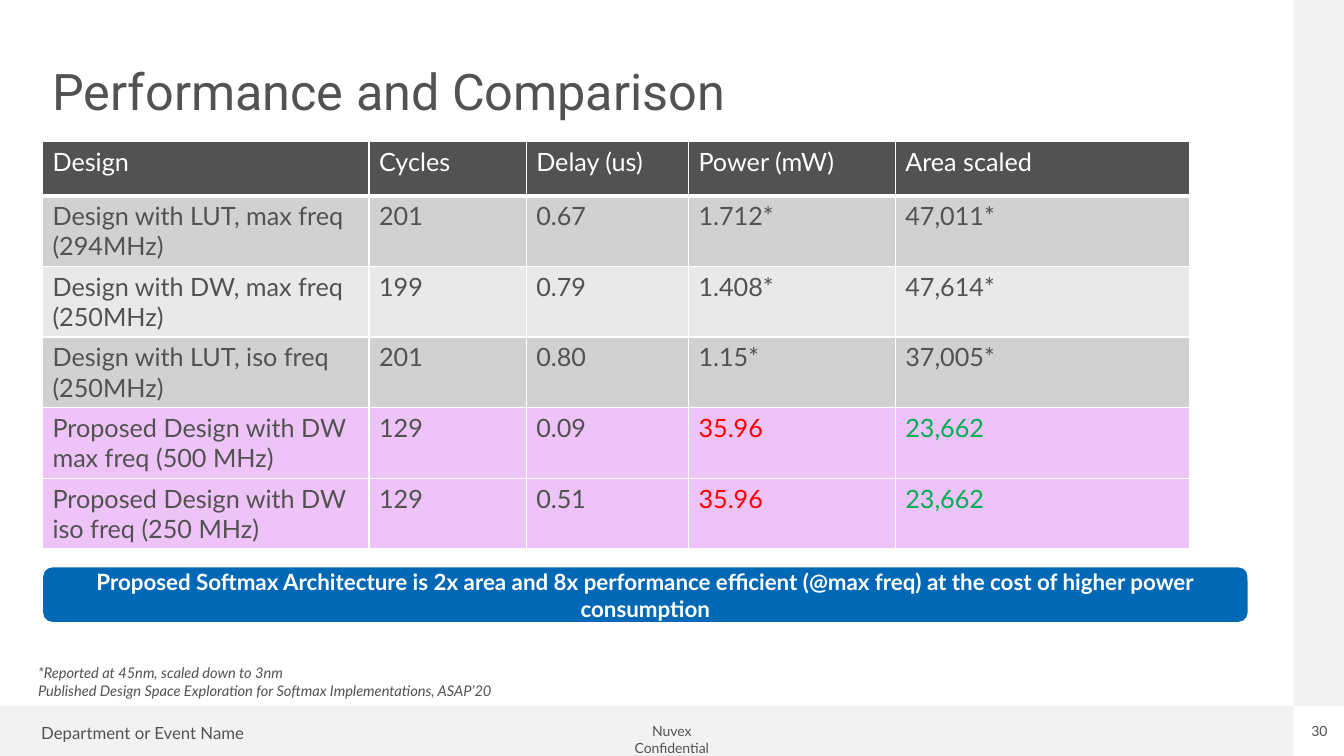
from dataclasses import dataclass

from lxml import etree
from pptx import Presentation
from pptx.dml.color import RGBColor
from pptx.enum.shapes import MSO_SHAPE
from pptx.enum.text import MSO_ANCHOR, PP_ALIGN
from pptx.oxml.ns import qn
from pptx.util import Cm, Pt

RECTANGLE = MSO_SHAPE.RECTANGLE
ROUNDED = MSO_SHAPE.ROUNDED_RECTANGLE
LEFT, CENTER = PP_ALIGN.LEFT, PP_ALIGN.CENTER
TOP, MIDDLE = MSO_ANCHOR.TOP, MSO_ANCHOR.MIDDLE


@dataclass(frozen=True)
class Theme:
    body_font: str = "Lato"
    title_font: str = "Roboto"
    ink: str = "525252"
    white: str = "FFFFFF"
    margin_band: str = "F2F2F2"
    row_dark: str = "D1D1D1"
    row_light: str = "E9E9E9"
    proposed: str = "EEC3F7"
    worse: str = "FF0000"
    better: str = "00B050"
    banner: str = "0068B5"
    title_size: float = 36
    table_size: float = 18
    banner_size: float = 16
    department_size: float = 12
    note_size: float = 10.5
    footer_size: float = 10


theme = Theme()


def write(frame, text, size, color=theme.ink, font=theme.body_font,
          align=LEFT, bold=False, italic=False):
    """Fill a text frame with one paragraph per line of text."""
    for index, line in enumerate(text.split("\n")):
        para = frame.add_paragraph() if index else frame.paragraphs[0]
        para.alignment = align
        span = para.add_run()
        span.text = line
        span.font.size = Pt(size)
        span.font.name = font
        span.font.bold = bold
        span.font.italic = italic
        span.font.color.rgb = RGBColor.from_string(color)


def add_panel(kind, left, top, width, height, color):
    panel = page.shapes.add_shape(kind, Cm(left), Cm(top), Cm(width), Cm(height))
    panel.shadow.inherit = False
    panel.fill.solid()
    panel.fill.fore_color.rgb = RGBColor.from_string(color)
    panel.line.fill.background()
    return panel


deck = Presentation()
deck.slide_width, deck.slide_height = Cm(33.87), Cm(19.05)
page = deck.slides.add_slide(deck.slide_layouts[6])

# Page frame
add_panel(RECTANGLE, 0, 17.78, 32.6, 1.27, theme.margin_band)
add_panel(RECTANGLE, 32.6, 0, 1.27, 17.78, theme.margin_band)

# Title, footer and footnote: place, wrap, margin, anchor, text, style
texts = [
    ((1.07, 0.61, 30.48, 3.33), True, 0.25, MIDDLE, "Performance and Comparison",
     dict(size=theme.title_size, font=theme.title_font)),
    ((15.24, 18.08, 3.38, 0.69), False, 0.25, TOP, "Nuvex Confidential",
     dict(size=theme.footer_size, align=CENTER)),
    ((0.79, 18.08, 6.05, 0.76), False, 0.25, TOP, "Department or Event Name",
     dict(size=theme.department_size)),
    ((33.02, 18.21, 0.46, 0.43), False, 0, TOP, "30",
     dict(size=theme.footer_size, align=CENTER)),
    ((0.71, 16.61, 31.17, 1.14), True, 0.25, TOP,
     "*Reported at 45nm, scaled down to 3nm\n"
     "Published Design Space Exploration for Softmax Implementations, ASAP’20",
     dict(size=theme.note_size, italic=True)),
]
for place, wrap, margin, anchor, text, style in texts:
    box = page.shapes.add_textbox(*map(Cm, place))
    frame = box.text_frame
    frame.word_wrap = wrap
    frame.vertical_anchor = anchor
    frame.margin_left = frame.margin_right = Cm(margin)
    frame.margin_top = frame.margin_bottom = Cm(margin / 2)
    write(frame, text, **style)

# Comparison table
column_widths = [8.23, 3.96, 4.09, 5.21, 7.42]
header_height, row_height = 1.37, 1.78
rows = [
    (theme.ink, ["Design", "Cycles", "Delay (us)", "Power (mW)", "Area scaled"]),
    (theme.row_dark,
     ["Design with LUT, max freq (294MHz)", "201", "0.67", "1.712*", "47,011*"]),
    (theme.row_light,
     ["Design with DW, max freq (250MHz)", "199", "0.79", "1.408*", "47,614*"]),
    (theme.row_dark,
     ["Design with LUT, iso freq (250MHz)", "201", "0.80", "1.15*", "37,005*"]),
    (theme.proposed,
     ["Proposed Design with DW\nmax freq (500 MHz)", "129", "0.09", "35.96", "23,662"]),
    (theme.proposed,
     ["Proposed Design with DW\niso freq (250 MHz)", "129", "0.51", "35.96", "23,662"]),
]
proposed_inks = [theme.ink, theme.ink, theme.ink, theme.worse, theme.better]
table = page.shapes.add_table(
    len(rows), len(column_widths), Cm(1.07), Cm(3.56), Cm(sum(column_widths)),
    Cm(header_height + row_height * (len(rows) - 1))).table
table.horz_banding = False
for column, width in zip(table.columns, column_widths):
    column.width = Cm(width)

for row_index, (fill, values) in enumerate(rows):
    table.rows[row_index].height = Cm(row_height if row_index else header_height)
    for column_index, value in enumerate(values):
        cell = table.cell(row_index, column_index)
        if row_index == 0:
            ink = theme.white
        elif fill == theme.proposed:
            ink = proposed_inks[column_index]
        else:
            ink = theme.ink
        write(cell.text_frame, value, theme.table_size, ink)

        properties = cell._tc.get_or_add_tcPr()
        for side in ("lnL", "lnR", "lnT", "lnB"):
            under_header = (row_index, side) in ((0, "lnB"), (1, "lnT"))
            border = etree.SubElement(properties, qn("a:" + side),
                                      w=str(Pt(3 if under_header else 1)))
            solid = etree.SubElement(border, qn("a:solidFill"))
            etree.SubElement(solid, qn("a:srgbClr"), val=theme.white)
        cell.fill.solid()
        cell.fill.fore_color.rgb = RGBColor.from_string(fill)

# Conclusion
banner = add_panel(ROUNDED, 1.09, 14.3, 30.35, 1.37, theme.banner)
banner.text_frame.word_wrap = True
banner.text_frame.vertical_anchor = MIDDLE
write(banner.text_frame,
      "Proposed Softmax Architecture is 2x area and 8x performance efficient "
      "(@max freq) at the cost of higher power consumption",
      theme.banner_size, theme.white, align=CENTER, bold=True)

deck.save("out.pptx")
